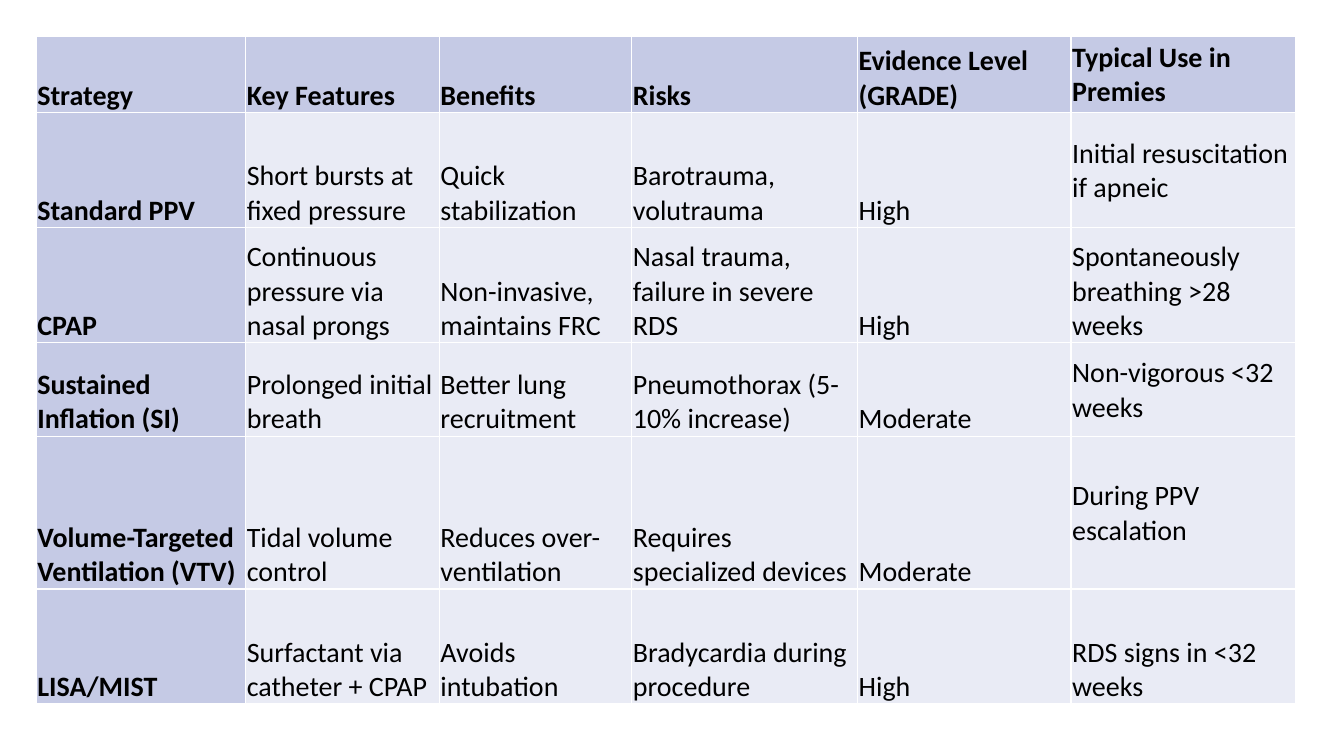
from dataclasses import dataclass

import lxml.etree
import pptx
import pptx.dml.color
import pptx.enum.text
import pptx.oxml.ns
import pptx.table
import pptx.util

Cm = pptx.util.Cm
Pt = pptx.util.Pt
RGB = pptx.dml.color.RGBColor
Anchor = pptx.enum.text.MSO_ANCHOR
qn = pptx.oxml.ns.qn

BLACK = RGB(0x00, 0x00, 0x00)
WHITE = RGB(0xFF, 0xFF, 0xFF)
LILAC = RGB(0xC5, 0xCA, 0xE5)
PALE = RGB(0xE9, 0xEB, 0xF5)

LEFT = TOP = 0.91
WIDTHS = [5.28, 4.88, 4.85, 5.69, 5.38, 5.66]
INSET = {
    "margin_left": Cm(0.03),
    "margin_top": Cm(0.03),
    "margin_right": Cm(0.03),
    "margin_bottom": Cm(0),
}
FONT = {"name": "Calibri", "size": Pt(20)}


@dataclass
class Row:
    height: float
    texts: list[str]
    last: Anchor = Anchor.MIDDLE


ROWS = [
    Row(1.93, ["Strategy", "Key Features", "Benefits", "Risks",
               "Evidence Level (GRADE)", "Typical Use in Premies"]),
    Row(2.9, ["Standard PPV", "Short bursts at fixed pressure",
              "Quick stabilization", "Barotrauma, volutrauma", "High",
              "Initial resuscitation if apneic"]),
    Row(2.9, ["CPAP", "Continuous pressure via nasal prongs",
              "Non-invasive, maintains FRC",
              "Nasal trauma, failure in severe RDS", "High",
              "Spontaneously breathing >28 weeks"], Anchor.BOTTOM),
    Row(2.36, ["Sustained Inflation (SI)", "Prolonged initial breath",
               "Better lung recruitment", "Pneumothorax (5-10% increase)",
               "Moderate", "Non-vigorous <32 weeks"]),
    Row(3.84, ["Volume-Targeted Ventilation (VTV)", "Tidal volume control",
               "Reduces over-ventilation", "Requires specialized devices",
               "Moderate", "During PPV escalation"]),
    Row(2.9, ["LISA/MIST", "Surfactant via catheter + CPAP",
              "Avoids intubation", "Bradycardia during procedure", "High",
              "RDS signs in <32 weeks"], Anchor.BOTTOM),
]


def format(item: object, values: dict[str, object]) -> None:
    for name, value in values.items():
        setattr(item, name, value)


def border(cell: pptx.table._Cell) -> None:
    props = cell._tc.get_or_add_tcPr()
    for side in ("lnL", "lnR", "lnT", "lnB"):
        line = lxml.etree.SubElement(props, qn(f"a:{side}"), w=str(Pt(1)))
        fill = lxml.etree.SubElement(line, qn("a:solidFill"))
        lxml.etree.SubElement(fill, qn("a:srgbClr"), val=str(WHITE))


def draw(cell: pptx.table._Cell, text: str, head: bool, anchor: Anchor) -> None:
    format(cell, INSET | {"text": text, "vertical_anchor": anchor})
    border(cell)
    cell.fill.solid()
    cell.fill.fore_color.rgb = LILAC if head else PALE
    font = cell.text_frame.paragraphs[0].runs[0].font
    format(font, FONT | {"bold": head})
    font.color.rgb = BLACK


def main() -> None:
    deck = pptx.Presentation()
    format(deck, {"slide_width": Cm(33.87), "slide_height": Cm(19.05)})
    slide = deck.slides.add_slide(deck.slide_layouts[6])
    table = slide.shapes.add_table(
        len(ROWS), len(WIDTHS), Cm(LEFT), Cm(TOP),
        Cm(sum(WIDTHS)), Cm(sum(row.height for row in ROWS))).table
    for col, width in zip(table.columns, WIDTHS):
        col.width = Cm(width)
    for r, row in enumerate(ROWS):
        table.rows[r].height = Cm(row.height)
        for c, text in enumerate(row.texts):
            anchor = row.last if c == len(WIDTHS) - 1 else Anchor.BOTTOM
            draw(table.cell(r, c), text, r == 0 or c == 0, anchor)
    deck.save("out.pptx")


if __name__ == "__main__":
    main()
